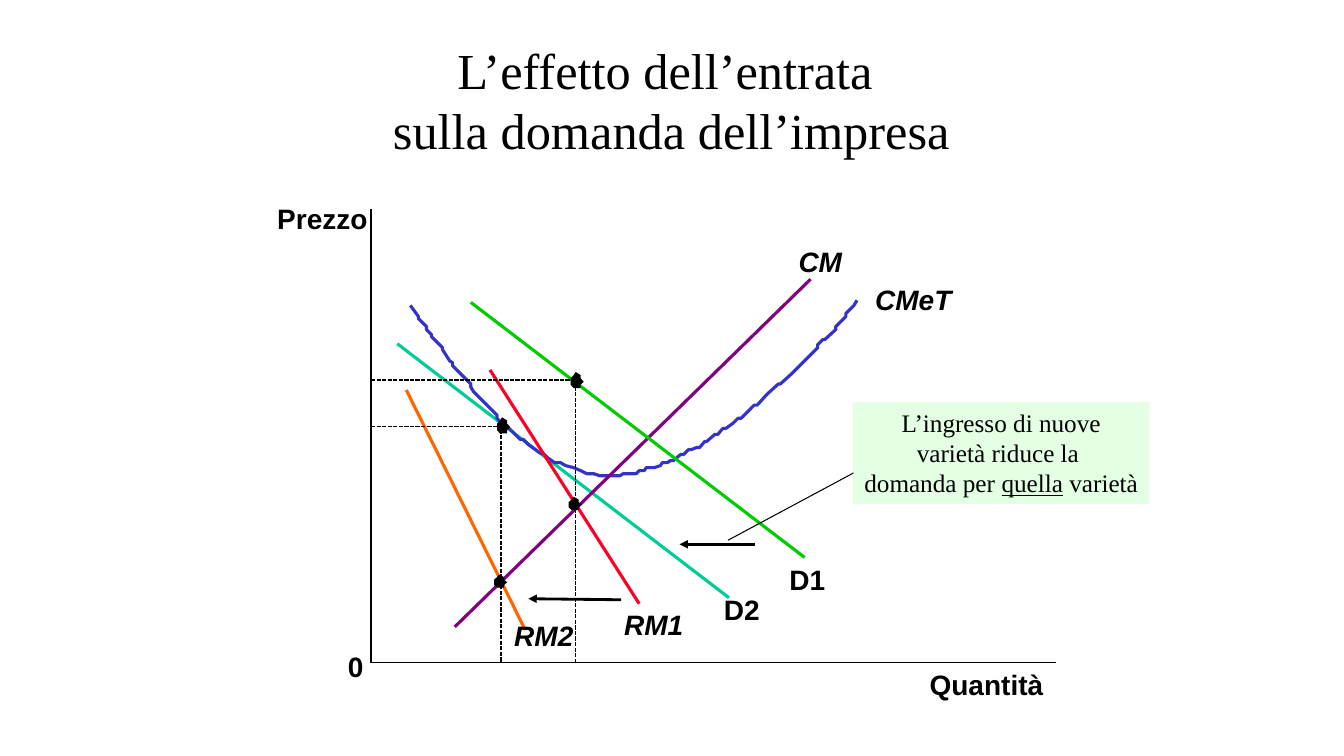
import pptx
import pptx.dml.color
import pptx.enum.dml
import pptx.enum.shapes
import pptx.enum.text
import pptx.oxml.ns
import pptx.util
from lxml import etree

Inches = pptx.util.Inches
Pt = pptx.util.Pt
RGBColor = pptx.dml.color.RGBColor
qn = pptx.oxml.ns.qn
ALIGN = pptx.enum.text.PP_ALIGN
ANCHOR = pptx.enum.text.MSO_ANCHOR

BLACK = RGBColor(0x00, 0x00, 0x00)
TEAL = RGBColor(0x00, 0xCC, 0x99)
ORANGE = RGBColor(0xFF, 0x66, 0x00)
BLUE = RGBColor(0x33, 0x33, 0xCC)
PURPLE = RGBColor(0x80, 0x00, 0x80)
GREEN = RGBColor(0x00, 0xCC, 0x00)
RED = RGBColor(0xFC, 0x01, 0x28)
PALE_GREEN = RGBColor(0xCC, 0xFF, 0xCC)

AXIS_X, AXIS_Y = 3.68, 6.57

AVERAGE_COST = [
    (8.5, 2.98), (8.47, 3.03), (8.39, 3.11), (8.39, 3.14), (8.29, 3.24),
    (8.29, 3.27), (8.18, 3.37), (8.16, 3.37), (8.11, 3.42), (8.11, 3.45),
    (7.98, 3.58), (7.85, 3.71), (7.74, 3.81), (7.72, 3.81), (7.61, 3.91),
    (7.51, 4.02), (7.48, 4.02), (7.35, 4.15), (7.32, 4.15), (7.27, 4.2),
    (7.2, 4.25), (7.17, 4.25), (7.12, 4.31), (7.09, 4.31), (7.01, 4.38),
    (6.99, 4.38), (6.94, 4.44), (6.91, 4.44), (6.86, 4.46), (6.83, 4.46),
    (6.78, 4.51), (6.75, 4.51), (6.68, 4.57), (6.65, 4.57), (6.62, 4.59),
    (6.57, 4.59), (6.55, 4.62), (6.49, 4.64), (6.41, 4.64), (6.39, 4.67),
    (6.34, 4.67), (6.31, 4.7), (6.18, 4.7), (6.15, 4.72), (5.95, 4.72),
    (5.89, 4.7), (5.82, 4.7), (5.76, 4.67), (5.69, 4.64), (5.61, 4.62),
    (5.56, 4.59), (5.5, 4.59), (5.43, 4.54), (5.4, 4.51), (5.35, 4.49),
    (5.24, 4.41), (5.19, 4.36), (5.16, 4.36), (5.03, 4.23), (5.01, 4.23),
    (4.93, 4.15), (4.93, 4.12), (4.83, 4.02), (4.7, 3.89), (4.67, 3.84),
    (4.67, 3.81), (4.57, 3.71), (4.49, 3.63), (4.49, 3.6), (4.46, 3.58),
    (4.39, 3.47), (4.39, 3.45), (4.28, 3.34), (4.28, 3.32), (4.23, 3.27),
    (4.23, 3.24), (4.15, 3.16), (4.15, 3.14), (4.07, 3.03),
]

DOT_OUTLINE = [
    (0.05, 1), (0.1, 1), (0.1, 0.8), (0.13, 0.6), (0.1, 0.4), (0.1, 0.2),
    (0.05, 0), (0.03, 0.2), (0, 0.4), (0, 0.8), (0.03, 1),
]


class MarketSlide:
    label_font = "Arial"
    text_font = "Times New Roman"

    def __init__(self, deck):
        self.slide = deck.slides.add_slide(deck.slide_layouts[5])
        self.shapes = self.slide.shapes

    def style(self, font, name, size, bold=False, italic=False):
        font.name, font.size = name, Pt(size)
        font.bold, font.italic = bold, italic
        font.color.rgb = BLACK

    def title(self, text):
        heading = self.shapes.title
        heading.left, heading.top = Inches(2.41), Inches(0.36)
        heading.width, heading.height = Inches(8.5), Inches(1.25)
        frame = heading.text_frame
        frame.text = text
        frame.vertical_anchor = ANCHOR.MIDDLE
        frame.auto_size = pptx.enum.text.MSO_AUTO_SIZE.NONE
        frame.paragraphs[0].alignment = ALIGN.CENTER
        self.style(frame.paragraphs[0].font, self.text_font, 36)

    def label(self, text, left, top, width, italic=False):
        box = self.shapes.add_textbox(
            Inches(left), Inches(top), Inches(width), Inches(0.34))
        frame = box.text_frame
        frame.margin_left = frame.margin_right = 0
        frame.margin_top = frame.margin_bottom = 0
        frame.word_wrap = False
        frame.text = text
        self.style(frame.paragraphs[0].font, self.label_font, 20, True, italic)

    def line(self, start, end, color, width, arrow=False):
        segment = self.shapes.add_connector(
            pptx.enum.shapes.MSO_CONNECTOR.STRAIGHT,
            *(Inches(value) for value in (*start, *end)))
        segment.line.color.rgb = color
        segment.line.width = Pt(width)
        properties = segment.element.spPr
        if arrow:
            etree.SubElement(properties.find(qn("a:ln")), qn("a:headEnd"),
                             type="triangle")
        etree.SubElement(properties, qn("a:effectLst"))

    def outline(self, points, closed=False):
        first, *rest = [(Inches(x), Inches(y)) for x, y in points]
        builder = self.shapes.build_freeform(*first)
        builder.add_line_segments(rest, close=closed)
        drawn = builder.convert_to_shape()
        drawn.shadow.inherit = False
        return drawn

    def polyline(self, points, color, width, dashed=False):
        drawn = self.outline(points)
        drawn.fill.background()
        drawn.line.color.rgb = color
        drawn.line.width = Pt(width)
        if dashed:
            drawn.line.dash_style = pptx.enum.dml.MSO_LINE.SQUARE_DOT

    def dot(self, left, top, height):
        drawn = self.outline(
            [(left + x, top + y * height) for x, y in DOT_OUTLINE], True)
        drawn.fill.solid()
        drawn.fill.fore_color.rgb = BLACK
        drawn.line.fill.background()

    def guide(self, quantity, price):
        self.polyline(
            [(AXIS_X, price), (quantity, price), (quantity, AXIS_Y)],
            BLACK, 1, True)

    def note(self, lines, underlined):
        panel = self.shapes.add_shape(
            pptx.enum.shapes.MSO_SHAPE.RECTANGLE,
            Inches(8.46), Inches(3.99), Inches(2.94), Inches(1.01))
        panel.shadow.inherit = False
        panel.line.fill.background()
        panel.fill.solid()
        panel.fill.fore_color.rgb = PALE_GREEN
        tint = panel.element.spPr.find(qn("a:solidFill"))[0]
        etree.SubElement(tint, qn("a:alpha"), val="50000")
        frame = panel.text_frame
        frame.word_wrap = False
        frame.vertical_anchor = ANCHOR.TOP
        for index, parts in enumerate(lines):
            row = frame.add_paragraph() if index else frame.paragraphs[0]
            row.alignment = ALIGN.CENTER
            self.style(row.font, self.text_font, 18)
            for part in parts:
                run = row.add_run()
                run.text = part
                if part == underlined:
                    run.font.underline = True


def main():
    deck = pptx.Presentation()
    deck.slide_width, deck.slide_height = Inches(13.33), Inches(7.5)
    market = MarketSlide(deck)
    market.title("L’effetto dell’entrata \vsulla domanda dell’impresa")

    market.polyline([(AXIS_X, 2.07), (AXIS_X, AXIS_Y), (10.47, AXIS_Y)],
                    BLACK, 1)
    for start, end, color in [
        ((3.94, 3.41), (7.23, 5.93), TEAL),
        ((4.03, 3.87), (5.21, 6.25), ORANGE),
    ]:
        market.line(start, end, color, 2.25)
    market.polyline(AVERAGE_COST, BLUE, 2.25)
    for start, end, color in [
        ((8.04, 2.77), (4.51, 6.22), PURPLE),
        ((4.67, 3), (7.98, 5.53), GREEN),
        ((4.86, 3.67), (6.34, 5.99), RED),
    ]:
        market.line(start, end, color, 2.25)
    market.line((5.24, 5.94), (6.16, 5.95), BLACK, 2, arrow=True)
    market.line((6.74, 5.4), (7.49, 5.4), BLACK, 2, arrow=True)

    for text, left, top, width, italic in [
        ("Quantità", 9.22, 6.62, 1.14, False),
        ("Prezzo", 2.75, 2, 0.9, False),
        ("0", 3.45, 6.44, 0.16, False),
        ("D1", 7.83, 5.58, 0.36, False),
        ("D2", 7.18, 5.88, 0.36, False),
        ("RM1", 6.19, 6.03, 0.59, True),
        ("RM2", 5.1, 6.14, 0.59, True),
        ("CMeT", 8.68, 2.8, 0.76, True),
        ("CM", 7.92, 2.43, 0.44, True),
    ]:
        market.label(text, left, top, width, italic)

    market.line((7.22, 5.36), (8.47, 4.69), BLACK, 0.75)
    market.note([["L’ingresso di nuove"], ["varietà riduce la "],
                 ["domanda per ", "quella", " varietà"]], "quella")
    market.guide(4.97, 4.23)
    market.guide(5.71, 3.77)
    for left, top, height in [(4.93, 4.14, 0.16), (5.64, 4.93, 0.13),
                              (4.9, 5.7, 0.13), (5.66, 3.69, 0.16)]:
        market.dot(left, top, height)
    deck.save("out.pptx")


if __name__ == "__main__":
    main()
